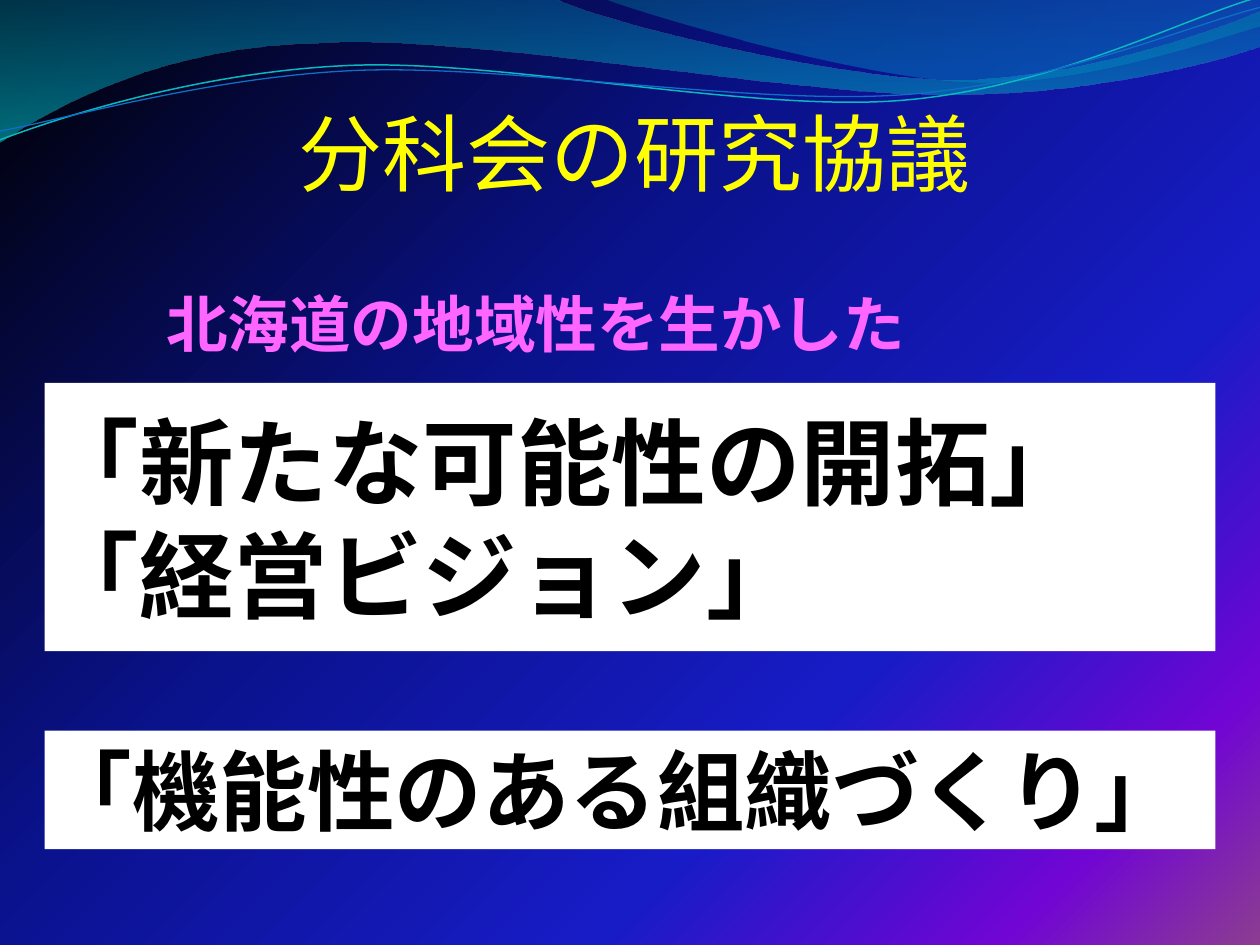
from lxml.etree import SubElement
from pptx import Presentation
from pptx.dml.color import RGBColor
from pptx.enum.shapes import MSO_SHAPE
from pptx.enum.text import MSO_ANCHOR, PP_ALIGN
from pptx.oxml.ns import qn
from pptx.util import Cm, Pt

FONT = "Noto Sans CJK JP"
BLACK = RGBColor(0x00, 0x00, 0x00)
WHITE = RGBColor(0xFF, 0xFF, 0xFF)
YELLOW = RGBColor(0xFF, 0xFF, 0x00)
PINK = RGBColor(0xFF, 0x66, 0xFF)
TEAL = RGBColor(0x0A, 0xB8, 0xBF)
BLUE = RGBColor(0x0F, 0x6F, 0xC6)

NIGHT_SKY = [
    (0, BLACK, 100),
    (40, RGBColor(0x0A, 0x12, 0x8C), 100),
    (70, RGBColor(0x18, 0x1C, 0xC7), 100),
    (88, RGBColor(0x70, 0x05, 0xD4), 100),
    (100, RGBColor(0x8C, 0x3D, 0x91), 100),
]
WIDE_WAVE_STOPS = [
    (0, RGBColor(0x00, 0x74, 0xA1), 45),
    (100, RGBColor(0x00, 0xC6, 0xCF), 55),
]
RIGHT_WAVE_STOPS = [
    (0, RGBColor(0x00, 0xA1, 0xA9), 30),
    (80, RGBColor(0x00, 0x8B, 0xBF), 45),
]

WIDE_WAVE = [
    [(0, 0)],
    [(11.18, -0.03)],
    [(12.09, 0.43), (16.87, 1.6), (19.25, 1.6)],
    [(21.67, 1.6), (24.33, 0.66), (25.4, 0.23)],
    [(25.43, 0.91)],
    [(24.97, 1.12), (22.1, 1.93), (18.95, 1.9)],
    [(15.8, 1.9), (9.7, 0.71), (6.53, 0.86)],
    [(3.28, 0.91), (1.17, 2.11), (-0.03, 2.87)],
]
RIGHT_WAVE = [
    [(12.17, -0.03)],
    [(12.93, 0.28), (17.32, 1.57), (19.53, 1.65)],
    [(21.74, 1.75), (24.41, 0.81), (25.4, 0.53)],
    [(25.4, 0)],
]
TEAL_STRAND = [
    [(0, 2.82)],
    [(1.22, 2.36), (4.01, 1.45), (7.04, 1.32)],
    [(10.03, 1.19), (15.06, 2.26), (18.11, 2.03)],
    [(21.16, 1.8), (23.83, 0.38), (25.35, -0.05)],
]
BLUE_STRAND = [
    [(0, 2.64)],
    [(1.19, 2.44), (4.17, 1.55), (7.19, 1.42)],
    [(10.24, 1.3), (15.16, 2.13), (18.21, 1.91)],
    [(21.23, 1.7), (23.9, 0.53), (25.4, 0.15)],
]


def set_gradient(fill, owner, stops, angle):
    fill.solid()
    solid = owner.find(".//" + qn("a:solidFill"))
    gradient = solid.makeelement(qn("a:gradFill"), {"rotWithShape": "1"})
    stop_list = SubElement(gradient, qn("a:gsLst"))
    for position, color, opacity in stops:
        stop = SubElement(stop_list, qn("a:gs"), pos=str(position * 1000))
        tint = SubElement(stop, qn("a:srgbClr"), val=str(color))
        if opacity < 100:
            SubElement(tint, qn("a:alpha"), val=str(opacity * 1000))
    SubElement(gradient, qn("a:lin"), ang=str(angle * 60000), scaled="0")
    solid.getparent().replace(solid, gradient)


def add_outline(slide, segments, close):
    ends = [(Cm(segment[-1][0]), Cm(segment[-1][1])) for segment in segments]
    builder = slide.shapes.build_freeform(*ends[0])
    builder.add_line_segments(ends[1:], close=close)
    outline = builder.convert_to_shape()
    outline.shadow.inherit = False
    straight_lines = list(outline.element.iter(qn("a:lnTo")))
    for straight, segment in zip(straight_lines, segments[1:]):
        if len(segment) == 1:
            continue
        curve = straight.makeelement(qn("a:cubicBezTo"), {})
        for x, y in segment:
            SubElement(curve, qn("a:pt"), x=str(Cm(x) - outline.left), y=str(Cm(y) - outline.top))
        straight.getparent().replace(straight, curve)
    return outline


def add_wave(slide, segments, stops):
    wave = add_outline(slide, segments, True)
    wave.line.fill.background()
    set_gradient(wave.fill, wave.element.spPr, stops, 90)


def add_strand(slide, segments, color, width):
    strand = add_outline(slide, segments, False)
    strand.fill.background()
    strand.line.color.rgb = color
    strand.line.width = Pt(width)


def write_lines(shape, lines, size, color, align, bold=True, small_caps=False):
    shape.text_frame.word_wrap = True
    paragraph = shape.text_frame.paragraphs[0]
    paragraph.alignment = align
    for index, line in enumerate(lines):
        if index:
            paragraph.add_line_break()
        run = paragraph.add_run()
        run.text = line
        run.font.name = FONT
        run.font.size = Pt(size)
        run.font.bold = bold
        run.font.color.rgb = color
        properties = run.font._element
        SubElement(properties, qn("a:ea"), typeface=FONT)
        if small_caps:
            properties.set("cap", "small")


def add_panel(slide, top, height, lines, size, align):
    panel = slide.shapes.add_shape(
        MSO_SHAPE.RECTANGLE, Cm(0.9), Cm(top), Cm(23.6), Cm(height))
    panel.shadow.inherit = False
    panel.fill.solid()
    panel.fill.fore_color.rgb = WHITE
    panel.line.fill.background()
    frame = panel.text_frame
    frame.vertical_anchor = MSO_ANCHOR.MIDDLE
    frame.margin_left = frame.margin_top = frame.margin_bottom = 0
    frame.margin_right = Cm(0.05)
    write_lines(panel, lines, size, BLACK, align)


def add_heading(slide, left, top, width, height, text, size, color, **style):
    heading = slide.shapes.add_textbox(Cm(left), Cm(top), Cm(width), Cm(height))
    write_lines(heading, [text], size, color, PP_ALIGN.CENTER, **style)
    return heading


def main():
    deck = Presentation()
    deck.slide_width, deck.slide_height = Cm(25.4), Cm(19.05)
    slide = deck.slides.add_slide(deck.slide_layouts[6])
    set_gradient(slide.background.fill, slide.element, NIGHT_SKY, 45)

    add_wave(slide, WIDE_WAVE, WIDE_WAVE_STOPS)
    add_wave(slide, RIGHT_WAVE, RIGHT_WAVE_STOPS)
    add_strand(slide, TEAL_STRAND, TEAL, 0.85)
    add_strand(slide, BLUE_STRAND, BLUE, 0.75)

    add_panel(slide, 7.72, 5.41, ["「新たな可能性の開拓」", "「経営ビジョン」"], 54,
              PP_ALIGN.LEFT)
    title = add_heading(slide, 5.11, 1.93, 15.6, 2.79, "分科会の研究協議", 48, YELLOW,
                        bold=False)
    title.text_frame.margin_left = 0
    title.text_frame.margin_right = Cm(0.23)
    add_panel(slide, 14.73, 2.39, ["「機能性のある組織づくり」"], 50, PP_ALIGN.JUSTIFY)
    add_heading(slide, 0.89, 5.33, 19.81, 2.13, "北海道の地域性を生かした", 44, PINK,
                small_caps=True)

    deck.save("out.pptx")


if __name__ == "__main__":
    main()
